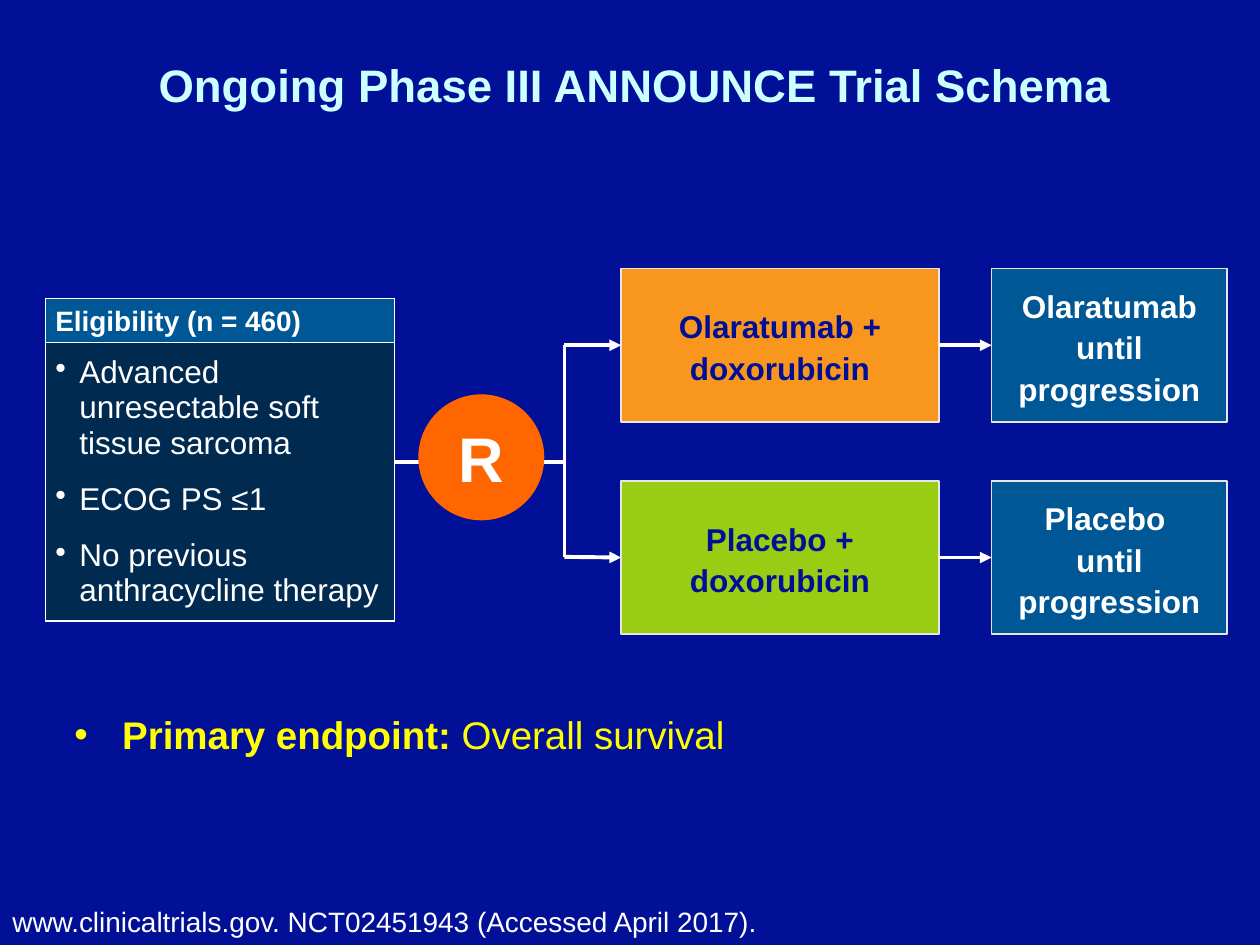
from lxml import etree
from pptx import Presentation
from pptx import util as u
from pptx.dml.color import RGBColor
from pptx.enum import shapes, text
from pptx.oxml.ns import qn

WHITE, NAVY, BLUE = "FFFFFF", "010F97", "005796"
TOP, LEFT, RIGHT = 0, 1, 3  # connection sites used on rectangles and table order


def color(value):
    return RGBColor.from_string(value)


class TrialSlide:
    font = "Arial"
    line_width = u.Pt(2.25)

    def __init__(self, presentation, background):
        self.slide = presentation.slides.add_slide(presentation.slide_layouts[1])
        fill = self.slide.background.fill
        fill.solid()
        fill.fore_color.rgb = color(background)

    def style(self, paragraph, size, hex_color, bold=None, align=None, spacing=None):
        font = paragraph.font
        font.name, font.size, font.bold = self.font, u.Pt(size), bold
        font.color.rgb = color(hex_color)
        paragraph.alignment = align
        paragraph.line_spacing = spacing

    def bullet(self, paragraph, indent):
        properties = paragraph._p.get_or_add_pPr()
        properties.set("marL", str(u.Inches(indent)))
        properties.set("indent", str(-u.Inches(indent)))
        mark = etree.Element(qn("a:buChar"), char="•")
        properties.insert_element_before(mark, "a:tabLst", "a:defRPr", "a:extLst")

    def place(self, shape, left, top, width, height):
        shape.left, shape.top = u.Inches(left), u.Inches(top)
        shape.width, shape.height = u.Inches(width), u.Inches(height)

    def title(self, words, box):
        title = self.slide.shapes.title
        self.place(title, *box)
        title.text_frame.text = words
        title.text_frame.vertical_anchor = text.MSO_ANCHOR.MIDDLE
        self.style(title.text_frame.paragraphs[0], 26, "CCFFFF", True,
                   text.PP_ALIGN.CENTER, 0.9)

    def endpoint(self, label, words, box):
        body = self.slide.placeholders[1]
        self.place(body, *box)
        paragraph = body.text_frame.paragraphs[0]
        self.style(paragraph, 22, "FFFF00")
        paragraph.space_before = u.Pt(0)
        self.bullet(paragraph, 0.38)
        for part, bold in ((label, True), (words, False)):
            run = paragraph.add_run()
            run.text, run.font.bold = part, bold

    def note(self, words, box):
        shape = self.slide.shapes.add_textbox(*map(u.Inches, box))
        shape.text_frame.word_wrap = True
        shape.text_frame.text = words
        self.style(shape.text_frame.paragraphs[0], 16, WHITE)

    def node(self, words, box, fill, text_color=WHITE, size=18, outline="E6E6E6",
             kind=shapes.MSO_SHAPE.RECTANGLE, spacing=1.1):
        shape = self.slide.shapes.add_shape(kind, *map(u.Inches, box))
        shape.shadow.inherit = False
        shape.fill.solid()
        shape.fill.fore_color.rgb = color(fill)
        if outline:
            shape.line.color.rgb = color(outline)
            shape.line.width = u.Pt(1)
        else:
            shape.line.fill.background()
        frame = shape.text_frame
        frame.text = words
        frame.word_wrap = True
        frame.vertical_anchor = text.MSO_ANCHOR.MIDDLE
        for paragraph in frame.paragraphs:
            self.style(paragraph, size, text_color, True, text.PP_ALIGN.CENTER, spacing)
        return shape

    def line(self, start=(0, 0), end=(0, 0), source=None, target=None):
        connector = self.slide.shapes.add_connector(
            shapes.MSO_CONNECTOR.STRAIGHT, *map(u.Inches, (*start, *end)))
        connector.line.color.rgb = color(WHITE)
        connector.line.width = self.line_width
        if source is not None:
            connector.begin_connect(source, RIGHT)
        if target is not None:
            connector.end_connect(target, LEFT)
            etree.SubElement(connector.line._get_or_add_ln(), qn("a:tailEnd"),
                             type="triangle")
        etree.SubElement(connector._element.spPr, qn("a:effectLst"))

    def cell(self, cell, lines, fill, anchor):
        properties = cell._tc.get_or_add_tcPr()
        for side in ("lnL", "lnR", "lnT", "lnB"):
            border = etree.SubElement(properties, qn("a:" + side), w=str(u.Pt(1)))
            solid = etree.SubElement(border, qn("a:solidFill"))
            etree.SubElement(solid, qn("a:srgbClr"), val=WHITE)
        cell.fill.solid()
        cell.fill.fore_color.rgb = color(fill)
        cell.vertical_anchor = anchor
        cell.margin_left = cell.margin_right = u.Inches(0.08)
        cell.margin_top = cell.margin_bottom = u.Inches(0.04)
        cell.text_frame.text = "\n".join(lines)
        return cell.text_frame.paragraphs

    def eligibility(self, heading, criteria, box, heights):
        table = self.slide.shapes.add_table(2, 1, *map(u.Inches, box)).table
        table.first_row = table.horz_banding = False
        for row, height in zip(table.rows, heights):
            row.height = u.Inches(height)
        for paragraph in self.cell(table.cell(0, 0), [heading], BLUE,
                                   text.MSO_ANCHOR.BOTTOM):
            self.style(paragraph, 16, WHITE, True)
        for paragraph in self.cell(table.cell(1, 0), criteria, "012A50",
                                   text.MSO_ANCHOR.MIDDLE):
            self.style(paragraph, 18, WHITE, False)
            paragraph.space_before = paragraph.space_after = u.Pt(6)
            self.bullet(paragraph, 0.19)


def main():
    presentation = Presentation()
    presentation.slide_width, presentation.slide_height = u.Inches(10), u.Inches(7.5)
    trial = TrialSlide(presentation, "011097")

    # Title, endpoint and source
    trial.title("Ongoing Phase III ANNOUNCE Trial Schema", (0.25, 0, 9.58, 1.4))
    trial.endpoint("Primary endpoint: ", "Overall survival", (0.49, 5.59, 5.7, 0.47))
    trial.note("www.clinicaltrials.gov. NCT02451943 (Accessed April 2017).",
               (0, 7.13, 9.78, 0.37))

    # Eligibility and randomisation
    fork, middle, upper, lower = 4.48, 3.67, 2.74, 4.42
    trial.line((2.81, middle), (fork, middle))
    trial.line((fork, upper), (fork, lower))
    trial.eligibility("Eligibility (n = 460)",
                      ["Advanced unresectable soft tissue sarcoma", "ECOG PS ≤1",
                       "No previous anthracycline therapy"],
                      (0.36, 2.37, 2.77, 2.55), (0.34, 2.21))
    trial.node("R", (3.32, 3.13, 1, 1), "FF6600", size=36, outline=None,
               kind=shapes.MSO_SHAPE.OVAL, spacing=1)

    # Treatment arms
    arms = [
        (upper, 2.13, 1.22, "F9961E", "Olaratumab + doxorubicin",
         "Olaratumab until progression"),
        (lower, 3.82, 1.21, "99CD13", "Placebo + doxorubicin",
         "Placebo \nuntil progression"),
    ]
    for level, top, height, fill, treatment, follow_up in arms:
        therapy = trial.node(treatment, (4.93, top, 2.52, height), fill, NAVY)
        maintenance = trial.node(follow_up, (7.87, top, 1.87, height), BLUE)
        trial.line(start=(fork, level), target=therapy)
        trial.line(source=therapy, target=maintenance)

    presentation.save("out.pptx")


if __name__ == "__main__":
    main()
